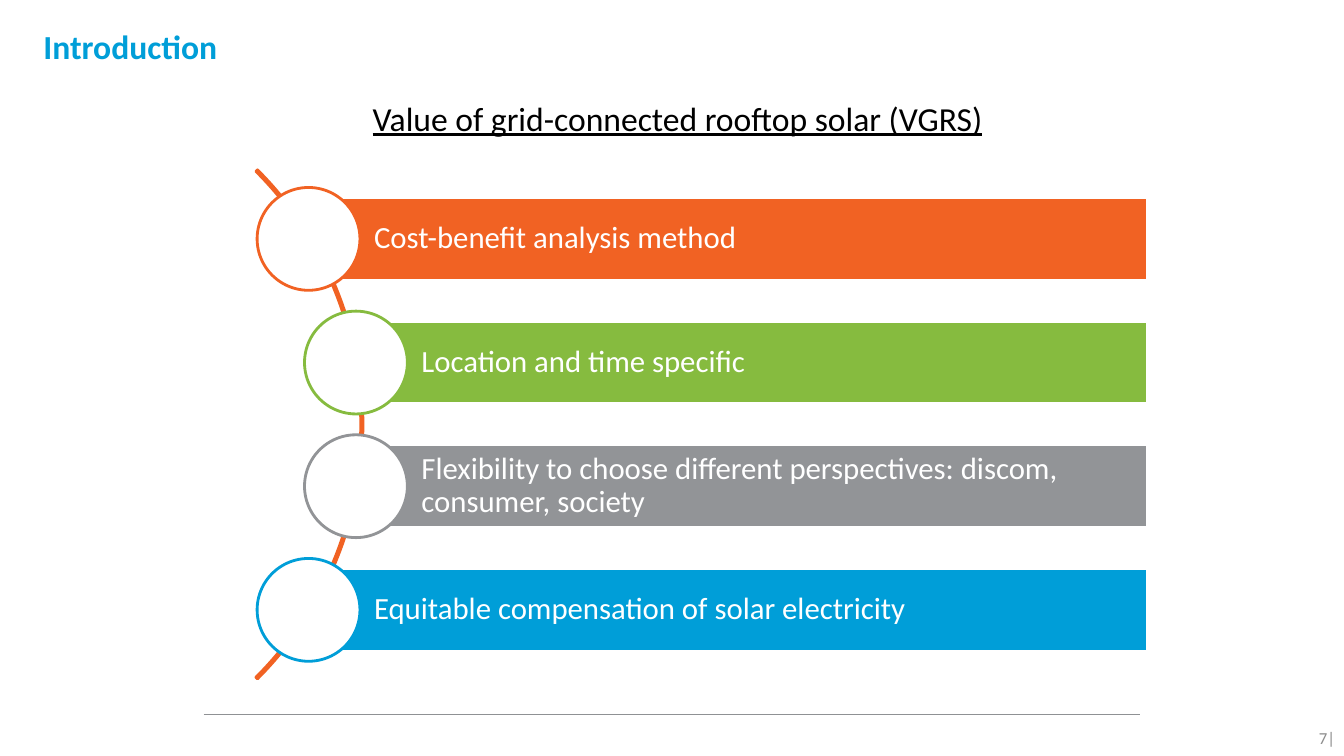
from pptx import Presentation
from pptx.dml.color import RGBColor
from pptx.enum.shapes import MSO_CONNECTOR, MSO_SHAPE
from pptx.enum.text import MSO_ANCHOR, PP_ALIGN
from pptx.oxml.ns import qn
from pptx.util import Inches, Pt
from lxml import etree

LEFT, CENTER, RIGHT = PP_ALIGN.LEFT, PP_ALIGN.CENTER, PP_ALIGN.RIGHT
TOP, MIDDLE = MSO_ANCHOR.TOP, MSO_ANCHOR.MIDDLE
ARC, BAR, CIRCLE = MSO_SHAPE.BLOCK_ARC, MSO_SHAPE.RECTANGLE, MSO_SHAPE.OVAL
STRAIGHT = MSO_CONNECTOR.STRAIGHT

FONT = "Calibri"
COLORS = {
    "orange": "F16223",
    "green": "86BB3F",
    "gray": "929497",
    "blue": "009ED8",
    "white": "FFFFFF",
    "black": "000000",
    "rule": "8F9194",
    "page": "8C8C8C",
}
FEATURES = [
    ("Cost-benefit analysis method", "orange", 3.06),
    ("Location and time specific", "green", 3.53),
    ("Flexibility to choose different perspectives: discom, consumer, society",
     "gray", 3.53),
    ("Equitable compensation of solar electricity", "blue", 3.06),
]


def color(name):
    return RGBColor.from_string(COLORS[name])


def write(shape, text, size, color_name, align=LEFT, anchor=TOP,
          insets=(0.1, 0.05, 0.1, 0.05)):
    """Fill a shape with one paragraph and return that paragraph."""
    frame = shape.text_frame
    frame.word_wrap = True
    frame.vertical_anchor = anchor
    (frame.margin_left, frame.margin_top,
     frame.margin_right, frame.margin_bottom) = map(Inches, insets)
    frame.text = text
    paragraph = frame.paragraphs[0]
    paragraph.alignment = align
    font = paragraph.runs[0].font
    font.name, font.size = FONT, Pt(size)
    font.color.rgb = color(color_name)
    return paragraph


def add_text(slide, box, *args, **options):
    return write(slide.shapes.add_textbox(*map(Inches, box)), *args, **options)


def add_outlined(slide, kind, box, line, fill=None):
    shape = slide.shapes.add_shape(kind, *map(Inches, box))
    shape.shadow.inherit = False
    if fill:
        shape.fill.solid()
        shape.fill.fore_color.rgb = color(fill)
    else:
        shape.fill.background()
    shape.line.color.rgb = color(line)
    shape.line.width = Pt(2)
    return shape


def add_heading(slide, left, top, width):
    title = add_text(slide, (left, top, width, 0.87), "Introduction", 24,
                     "blue", insets=(0, 0.05, 0, 0.05))
    title.runs[0].font.bold = True
    subtitle = add_text(slide, (left, top + 0.71, width + 0.24, 0.75),
                        "Value of grid-connected rooftop solar (VGRS)", 24,
                        "black", align=CENTER)
    subtitle.runs[0].font.underline = True


def add_feature_list(slide, top, right, bottom):
    """Stack colored bars, each led by a circle, along a curved spine."""
    height, diameter, arc_size = 0.82, 1.02, 7.14
    middle = (top + bottom) / 2
    arc = add_outlined(slide, ARC, (-3.54, middle - arc_size / 2,
                                    arc_size, arc_size), "orange")
    # Start and end angles, then thickness, in the preset's own units
    for index, value in enumerate((189, 27, 0.003)):
        arc.adjustments[index] = value

    pitch = (bottom - top - height) / (len(FEATURES) - 1)
    for row, (text, color_name, left) in enumerate(FEATURES):
        bar_top = top + row * pitch
        bar = add_outlined(slide, BAR, (left, bar_top, right - left, height),
                           "white", color_name)
        paragraph = write(bar, text, 22, "white", anchor=MIDDLE,
                          insets=(0.65, 0.06, 0.06, 0.06))
        paragraph.line_spacing = 0.9
        add_outlined(slide, CIRCLE,
                     (left - diameter / 2, bar_top + (height - diameter) / 2,
                      diameter, diameter), color_name, "white")


def add_footer(slide, left, top, right):
    rule = slide.shapes.add_connector(
        STRAIGHT, Inches(left), Inches(top), Inches(right), Inches(top))
    rule.line.color.rgb = color("rule")
    rule.line.width = Pt(0.75)
    etree.SubElement(rule._element.spPr, qn("a:effectLst"))
    add_text(slide, (12.49, top + 0.03, 0.85, 0.4), "7|", 12, "page",
             align=RIGHT, anchor=MIDDLE)


def main():
    presentation = Presentation()
    presentation.slide_width = Inches(13.33)
    presentation.slide_height = Inches(7.5)
    slide = presentation.slides.add_slide(presentation.slide_layouts[6])
    add_footer(slide, left=2.02, top=7.09, right=11.31)
    add_heading(slide, left=0.43, top=0.21, width=12.34)
    add_feature_list(slide, top=1.96, right=11.38, bottom=6.46)
    presentation.save("out.pptx")


if __name__ == "__main__":
    main()
